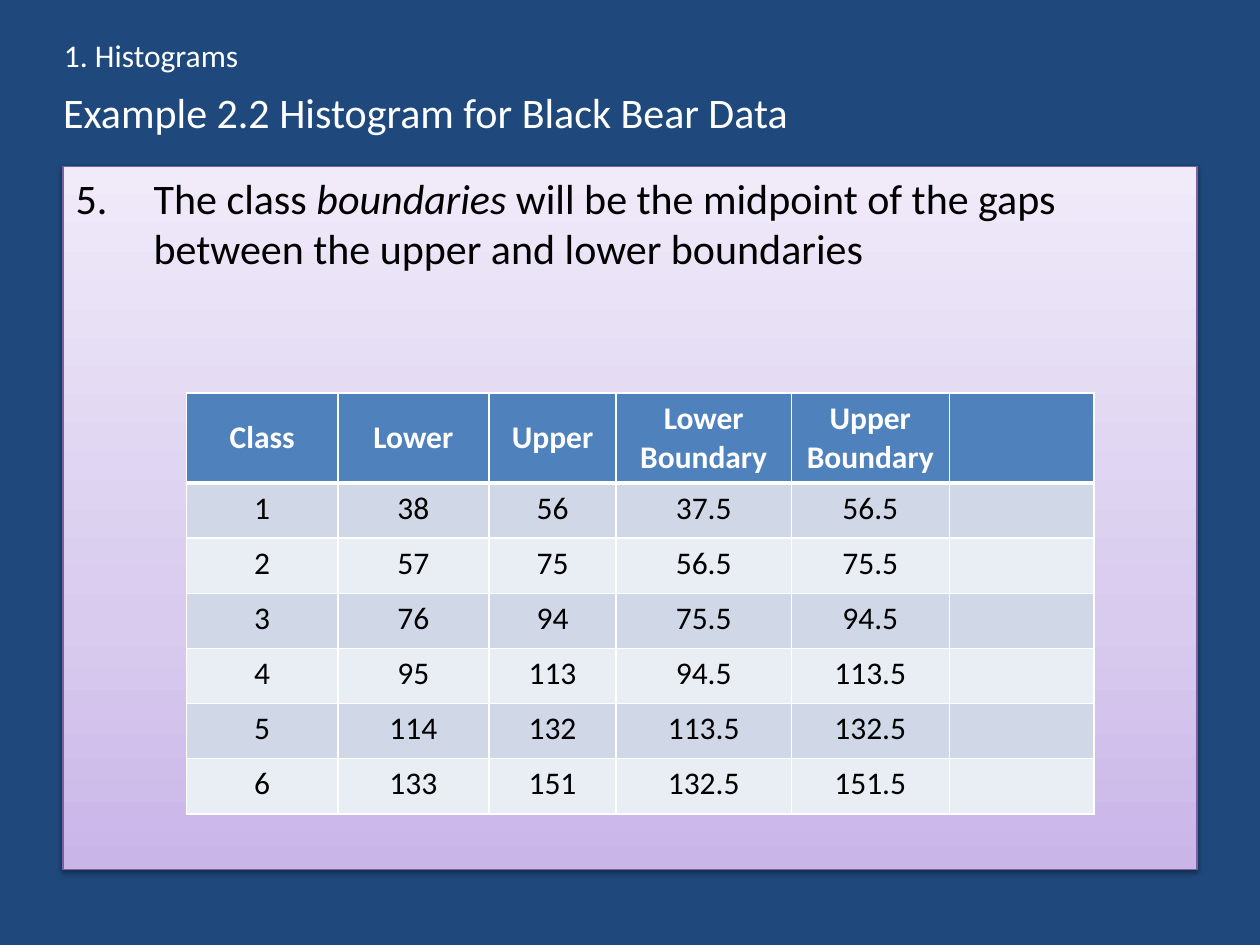
from lxml import etree
from pptx import Presentation
from pptx.dml.color import RGBColor
from pptx.enum.text import MSO_ANCHOR, MSO_AUTO_SIZE, PP_ALIGN
from pptx.oxml import parse_xml
from pptx.oxml.ns import nsdecls, qn
from pptx.util import Pt

LEFT, CENTER = PP_ALIGN.LEFT, PP_ALIGN.CENTER
MIDDLE, NO_FIT = MSO_ANCHOR.MIDDLE, MSO_AUTO_SIZE.NONE
WHITE, BLACK = "FFFFFF", "000000"
HEAD, BANDS = "4F81BD", ("D0D8E8", "E9EDF4")


def color(code):
    return RGBColor.from_string(code)


def write(para, text, size=18, ink=WHITE, bold=False, italic=False, align=LEFT):
    para.alignment = align
    run = para.add_run()
    run.text = text
    font = run.font
    font.name, font.size = "Calibri", Pt(size)
    font.bold, font.italic = bold, italic
    font.color.rgb = color(ink)


prs = Presentation()
prs.slide_width, prs.slide_height = Pt(720), Pt(540)
slide = prs.slides.add_slide(prs.slide_layouts[1])
slide.background.fill.solid()
slide.background.fill.fore_color.rgb = color("1F497D")

# Title
title = slide.shapes.title
title.left, title.top, title.width, title.height = Pt(28.8), Pt(44.6), Pt(648), Pt(39)
title.text_frame.auto_size = NO_FIT
title.text_frame.vertical_anchor = MIDDLE
write(title.text_frame.paragraphs[0], "Example 2.2 Histogram for Black Bear Data", size=24)

# Body panel with gradient, outline and shadow
body = slide.placeholders[1]
body.left, body.top, body.width, body.height = Pt(36), Pt(95), Pt(648), Pt(401.8)
props = body.element.spPr
stops = "".join(
    f'<a:gs pos="{pos * 1000}"><a:srgbClr val="{code}"/></a:gs>'
    for pos, code in ((0, "C9B5E8"), (35, "D8CBEE"), (100, "F0EAF9")))
props.append(parse_xml(
    f'<a:gradFill {nsdecls("a")} rotWithShape="1"><a:gsLst>{stops}</a:gsLst>'
    '<a:lin ang="16200000" scaled="1"/></a:gradFill>'))
body.line.color.rgb = color("7D60A0")
body.line.width = Pt(0.75)
props.append(parse_xml(
    f'<a:effectLst {nsdecls("a")}><a:outerShdw blurRad="{Pt(3.1)}" dist="{Pt(1.6)}" '
    f'dir="5400000" rotWithShape="0"><a:srgbClr val="{BLACK}"><a:alpha val="38000"/>'
    '</a:srgbClr></a:outerShdw></a:effectLst>'))

# Numbered step
body.text_frame.auto_size = NO_FIT
step = body.text_frame.paragraphs[0]
for text, slant in (
        ("The class ", False), ("boundaries", True),
        (" will be the midpoint of the gaps between the upper and lower boundaries", False)):
    write(step, text, size=24, ink=BLACK, italic=slant)
ppr = step._p.get_or_add_pPr()
ppr.set("marL", str(Pt(44.6)))
ppr.set("indent", str(-Pt(44.6)))
etree.SubElement(ppr, qn("a:buFont"), typeface="+mj-lt")
etree.SubElement(ppr, qn("a:buAutoNum"), type="arabicPeriod", startAt="5")

# Section label
label = slide.shapes.add_textbox(Pt(29.5), Pt(17.3), Pt(643), Pt(29))
label.text_frame.word_wrap = True
write(label.text_frame.paragraphs[0], "1. Histograms")

# Class table: each class spans 19 values, boundaries lie half a unit outside
rows = [("Class", "Lower", "Upper", "Lower Boundary", "Upper Boundary", "")]
for num in range(6):
    low = 38 + 19 * num
    high = low + 18
    rows.append((num + 1, low, high, low - 0.5, high + 0.5, ""))

widths = (86.4, 86.4, 72.7, 100.1, 90.3, 82.8)
frame = slide.shapes.add_table(
    len(rows), len(widths), Pt(106.6), Pt(224.6), Pt(sum(widths)), Pt(240.5))
table = frame.table
for col, width in zip(table.columns, widths):
    col.width = Pt(width)

for r, row in enumerate(rows):
    table.rows[r].height = Pt(31.5 if r else 51.5)
    for c, value in enumerate(row):
        cell = table.cell(r, c)
        if value != "":
            write(cell.text_frame.paragraphs[0], str(value), align=CENTER,
                  ink=BLACK if r else WHITE, bold=r == 0)
        if r == 0:
            cell.vertical_anchor = MIDDLE
        # White borders, heavier around the header's lower edge
        tcpr = cell._tc.get_or_add_tcPr()
        for side in "LRTB":
            thick = (r, side) in ((0, "B"), (1, "T"))
            tcpr.append(parse_xml(
                f'<a:ln{side} {nsdecls("a")} w="{Pt(3 if thick else 1)}"><a:solidFill>'
                f'<a:srgbClr val="{WHITE}"/></a:solidFill></a:ln{side}>'))
        cell.fill.solid()
        cell.fill.fore_color.rgb = color(BANDS[(r - 1) % 2] if r else HEAD)

prs.save("out.pptx")
